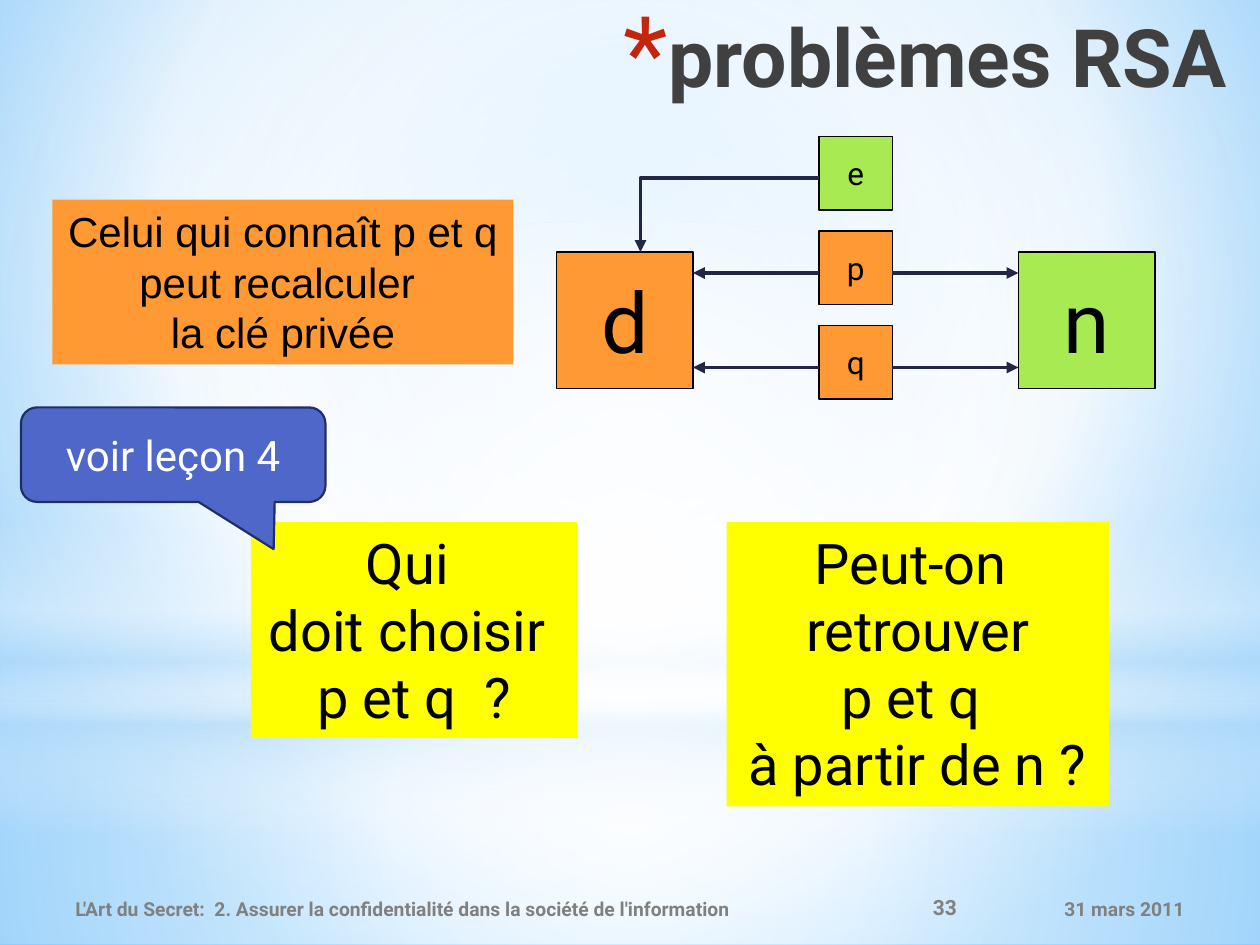
"""Build the slide about the RSA problems, with its key diagram and questions."""
import dataclasses
import typing

import pptx
import pptx.dml.color
import pptx.enum.shapes
import pptx.enum.text
import pptx.oxml
import pptx.oxml.ns
import pptx.util

EMU_PER_PX = 7620
SHAPES = pptx.enum.shapes.MSO_SHAPE
ALIGN = pptx.enum.text.PP_ALIGN
ANCHOR = pptx.enum.text.MSO_ANCHOR
AUTO_SIZE = pptx.enum.text.MSO_AUTO_SIZE


@dataclasses.dataclass(frozen=True)
class Theme:
    font: str = "Roboto"
    statement_font: str = "Arial"
    black: str = "000000"
    white: str = "FFFFFF"
    title: str = "404040"
    bullet: str = "C3260C"
    footer: str = "808080"
    secret: str = "FF9933"
    public: str = "A7EA52"
    question: str = "FFFF00"
    arrow: str = "212745"
    callout: str = "4E67C8"
    callout_line: str = "1F2E69"
    sky: str = "9ED5FF"
    deep_sky: str = "5BB9FF"
    haze: str = "B4DCFA"
    title_size: int = 46
    key_size: int = 48
    question_size: int = 32
    statement_size: int = 24
    input_size: int = 18
    number_size: int = 12
    footer_size: int = 11
    box_line: float = 0.75
    callout_line_width: float = 1.25
    arrow_width: float = 2.25


THEME = Theme()


class Box(typing.NamedTuple):
    left: int
    top: int
    width: int
    height: int


class Stop(typing.NamedTuple):
    position: int
    color: str
    opacity: int = 100


class Haze(typing.NamedTuple):
    box: Box
    stops: list[Stop]
    focus: tuple[int, int, int, int] | None = (50, 50, 50, 50)
    kind: int = SHAPES.RECTANGLE


class Key(typing.NamedTuple):
    text: str
    box: Box
    fill: str
    size: int


class Panel(typing.NamedTuple):
    text: str
    box: Box
    fill: str
    size: int
    font: str = THEME.font
    wrap: bool = False


class Footer(typing.NamedTuple):
    text: str
    box: Box
    align: int
    size: int = THEME.footer_size


WHITE, HAZE = THEME.white, THEME.haze
SKY_STOPS = [Stop(0, THEME.sky), Stop(60, WHITE), Stop(100, THEME.deep_sky)]
HAZES = [
    Haze(Box(0, 670, 1200, 230), [Stop(0, WHITE, 91), Stop(37, WHITE, 76), Stop(100, HAZE, 79)]),
    Haze(Box(0, 0, 1200, 670), [Stop(0, WHITE, 89), Stop(48, WHITE, 62), Stop(100, HAZE, 79)]),
    Haze(Box(0, 495, 1200, 300),
         [Stop(0, WHITE, 0), Stop(29, WHITE, 30), Stop(45, HAZE, 40),
          Stop(55, WHITE, 26), Stop(65, HAZE, 60), Stop(100, WHITE, 0)], None),
    Haze(Box(0, 210, 1200, 670), [Stop(0, WHITE), Stop(56, WHITE, 0)], kind=SHAPES.OVAL),
]
INPUTS = [Key(text, Box(780, 130 + 90 * row, 70, 70), fill, THEME.input_size)
          for row, (text, fill) in enumerate(
              [("e", THEME.public), ("p", THEME.secret), ("q", THEME.secret)])]
KEYS = [Key("d", Box(530, 240, 130, 130), THEME.secret, THEME.key_size),
        Key("n", Box(970, 240, 130, 130), THEME.public, THEME.key_size)]
PANELS = [
    Panel("Celui qui connaît p et q\npeut recalculer \nla clé privée", Box(50, 190, 439, 157),
          THEME.secret, THEME.statement_size, THEME.statement_font, True),
    Panel("Qui \ndoit choisir \np et q  ?", Box(239, 497, 311, 206),
          THEME.question, THEME.question_size),
    Panel("Peut-on \nretrouver\np et q \nà partir de n ?", Box(692, 497, 364, 271),
          THEME.question, THEME.question_size),
]
FOOTERS = [
    Footer("L'Art du Secret:  2. Assurer la confidentialité dans la société de l'information",
           Box(60, 842, 790, 48), ALIGN.LEFT),
    Footer("33", Box(850, 840, 100, 48), ALIGN.CENTER, THEME.number_size),
    Footer("31 mars 2011", Box(950, 842, 190, 48), ALIGN.RIGHT),
]


def px(length: int) -> int:
    return length * EMU_PER_PX


def rgb(color: str) -> pptx.dml.color.RGBColor:
    return pptx.dml.color.RGBColor.from_string(color)


def make_element(tag: str, attributes: str = "", content: str = ""):
    return pptx.oxml.parse_xml(
        f'<a:{tag} {pptx.oxml.ns.nsdecls("a")} {attributes}>{content}</a:{tag}>')


def set_gradient(fill, parent, stops: list[Stop], focus) -> None:
    fill.background()
    content = "".join(
        f'<a:gs pos="{stop.position * 1000}"><a:srgbClr val="{stop.color}">'
        f'<a:alpha val="{stop.opacity * 1000}"/></a:srgbClr></a:gs>' for stop in stops)
    direction = '<a:lin ang="5400000" scaled="0"/>'
    if focus:
        sides = " ".join(f'{side}="{value * 1000}"' for side, value in zip("ltrb", focus))
        direction = f'<a:path path="circle"><a:fillToRect {sides}/></a:path>'
    gradient = make_element("gradFill", 'rotWithShape="1"', f"<a:gsLst>{content}</a:gsLst>{direction}")
    parent.replace(parent.find(pptx.oxml.ns.qn("a:noFill")), gradient)


def write_text(shape, text: str, *, size: int, color: str = THEME.black, font: str = THEME.font,
               bold: bool = False, align: int = ALIGN.CENTER, anchor: int = ANCHOR.MIDDLE,
               wrap: bool = True, auto_size: int = AUTO_SIZE.NONE) -> None:
    frame = shape.text_frame
    frame.text = text
    frame.word_wrap, frame.auto_size, frame.vertical_anchor = wrap, auto_size, anchor
    for paragraph in frame.paragraphs:
        paragraph.alignment = align
        for run in paragraph.runs:
            run.font.name, run.font.bold = font, bold
            run.font.size = pptx.util.Pt(size)
            run.font.color.rgb = rgb(color)


def add_box(slide, box: Box, fill: str | None = None, line: str | None = None,
            line_width: float = THEME.box_line, kind: int = SHAPES.RECTANGLE):
    shape = slide.shapes.add_shape(kind, *map(px, box))
    shape.shadow.inherit = False
    if fill:
        shape.fill.solid()
        shape.fill.fore_color.rgb = rgb(fill)
    if line:
        shape.line.color.rgb = rgb(line)
        shape.line.width = pptx.util.Pt(line_width)
    else:
        shape.line.fill.background()
    return shape


def style_arrow(shape) -> None:
    shape.line.color.rgb = rgb(THEME.arrow)
    shape.line.width = pptx.util.Pt(THEME.arrow_width)
    properties = shape.element.spPr
    properties.find(pptx.oxml.ns.qn("a:ln")).append(make_element("tailEnd", 'type="triangle"'))
    properties.append(make_element("effectLst"))


def add_arrow(slide, start: tuple[int, int], end: tuple[int, int]) -> None:
    style_arrow(slide.shapes.add_connector(
        pptx.enum.shapes.MSO_CONNECTOR.STRAIGHT, *map(px, start + end)))


def add_bent_arrow(slide, start: tuple[int, int], points: list[tuple[int, int]]) -> None:
    builder = slide.shapes.build_freeform(*start, scale=EMU_PER_PX)
    builder.add_line_segments(points, close=False)
    shape = builder.convert_to_shape()
    shape.fill.background()
    style_arrow(shape)


def add_title(slide, text: str, box: Box) -> None:
    shape = slide.shapes.add_textbox(*map(px, box))
    write_text(shape, text, size=THEME.title_size, color=THEME.title, bold=True,
               align=ALIGN.RIGHT, anchor=ANCHOR.TOP)
    properties = shape.text_frame.paragraphs[0]._p.get_or_add_pPr()
    properties.set("marL", str(px(42)))
    properties.set("indent", str(px(-42)))
    properties.append(make_element("buClr", "", f'<a:srgbClr val="{THEME.bullet}"/>'))
    properties.append(make_element("buSzPct", 'val="128000"'))
    properties.append(make_element("buFont", f'typeface="{THEME.font}"'))
    properties.append(make_element("buChar", 'char="*"'))


def main() -> None:
    presentation = pptx.Presentation()
    presentation.slide_width, presentation.slide_height = px(1200), px(900)
    slide = presentation.slides.add_slide(presentation.slide_layouts[6])
    background = slide.background.fill
    background.background()
    set_gradient(background, slide.element.find(".//" + pptx.oxml.ns.qn("p:bgPr")),
                 SKY_STOPS, (20, 10, 20, 60))
    for haze in HAZES:
        shape = add_box(slide, haze.box, kind=haze.kind)
        set_gradient(shape.fill, shape.element.spPr, haze.stops, haze.focus)
    add_title(slide, "problèmes RSA", Box(0, 1, 1180, 150))
    for footer in FOOTERS:
        write_text(slide.shapes.add_textbox(*map(px, footer.box)), footer.text, size=footer.size,
                   color=THEME.footer, bold=True, align=footer.align)
    for key in INPUTS + KEYS:
        write_text(add_box(slide, key.box, key.fill, THEME.black), key.text,
                   size=key.size, wrap=False)
    for height in (260, 350):
        add_arrow(slide, (780, height), (660, height))
        add_arrow(slide, (850, height), (970, height))
    add_bent_arrow(slide, (780, 170), [(610, 170), (610, 240)])
    for panel in PANELS:
        write_text(add_box(slide, panel.box, panel.fill), panel.text, size=panel.size,
                   font=panel.font, anchor=ANCHOR.TOP, wrap=panel.wrap,
                   auto_size=AUTO_SIZE.SHAPE_TO_FIT_TEXT)
    callout = add_box(slide, Box(20, 388, 290, 90), THEME.callout, THEME.callout_line,
                      THEME.callout_line_width, SHAPES.ROUNDED_RECTANGULAR_CALLOUT)
    for index, value in enumerate((0.33, 1, 0.17)):
        callout.adjustments[index] = value
    write_text(callout, "voir leçon 4", size=THEME.statement_size, color=THEME.white)
    presentation.save("out.pptx")


if __name__ == "__main__":
    main()
